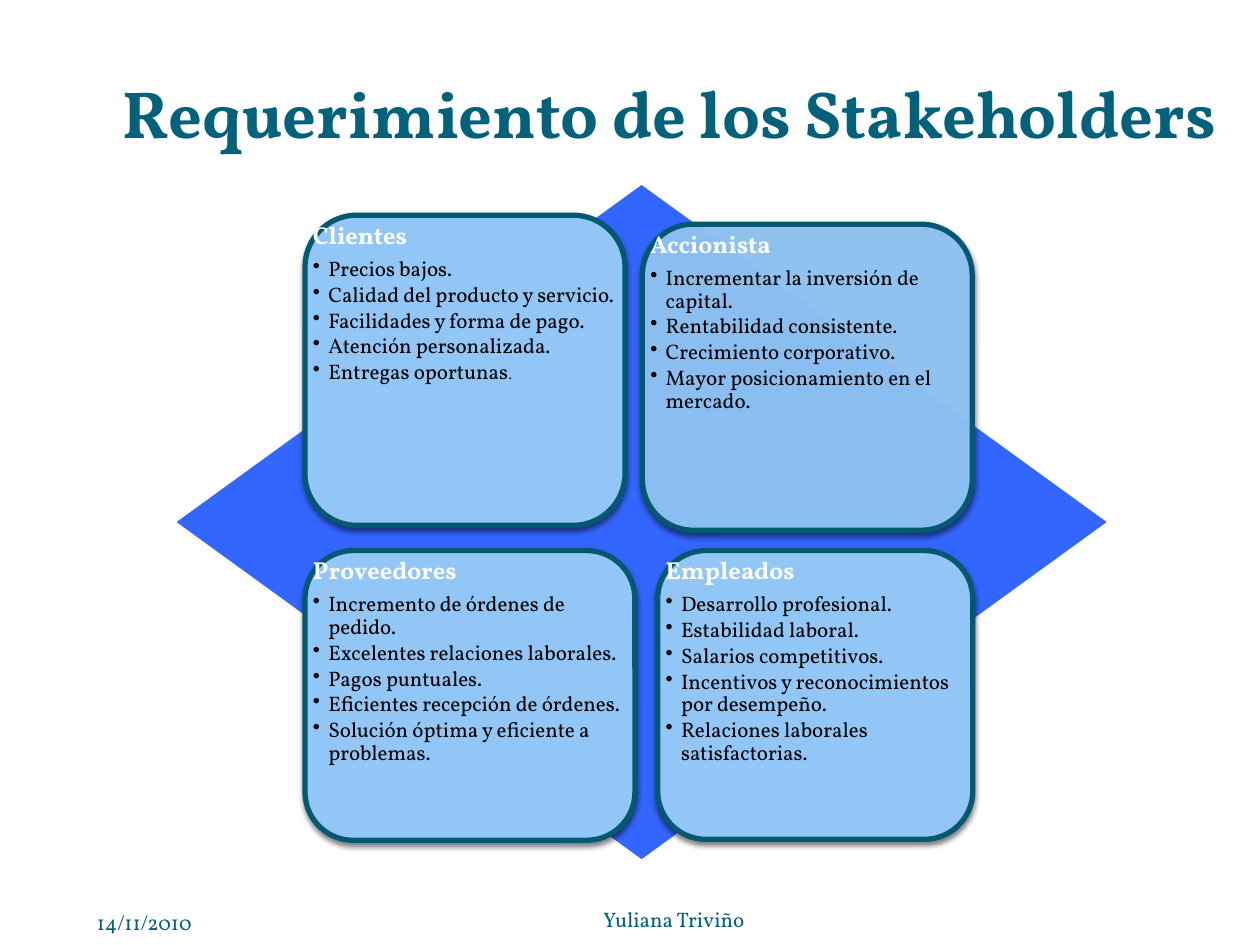
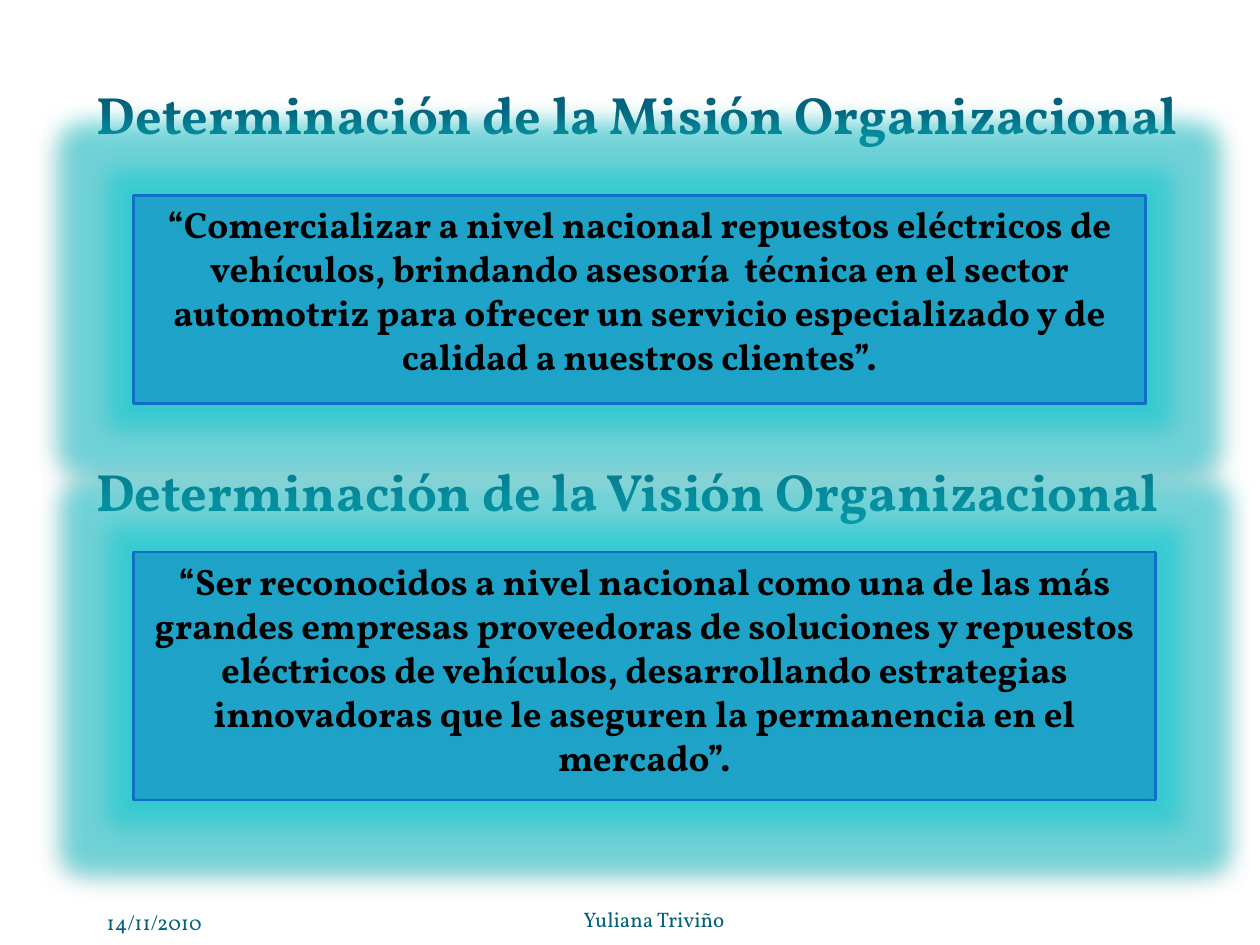
from lxml.etree import SubElement
from pptx import Presentation
from pptx.dml.color import RGBColor
from pptx.enum.shapes import MSO_SHAPE
from pptx.enum.text import MSO_ANCHOR, PP_ALIGN
from pptx.oxml.ns import qn
from pptx.util import Cm, Pt

TITLE_BLUE = RGBColor(0x04, 0x61, 0x7B)
DIAMOND_BLUE = RGBColor(0x33, 0x66, 0xFF)
CARD_BLUE = RGBColor(0x91, 0xC6, 0xF7)
CARD_EDGE = RGBColor(0x04, 0x58, 0x70)
PANEL_BLUE = RGBColor(0x00, 0x70, 0xC0)
PANEL_EDGE = RGBColor(0x0F, 0x6F, 0xC6)
GLOW = RGBColor(0x0B, 0xD0, 0xD9)
BLACK = RGBColor(0, 0, 0)
WHITE = RGBColor(0xFF, 0xFF, 0xFF)

FONT = "Vollkorn"
INSET = Cm(0.16)

# Boxes are (left, top, width, height) in centimetres.
DIAMOND = (3.56, 3.73, 18.75, 13.59)
CARDS = [
    ("Clientes", (6.15, 4.34, 6.45, 6.25), 100,
     ["Precios bajos.", "Calidad del producto y servicio.",
      "Facilidades y forma de pago.", "Atención personalizada.",
      "Entregas oportunas."]),
    ("Accionista", (12.95, 4.52, 6.65, 6.17), 94,
     ["Incrementar la inversión de capital.", "Rentabilidad consistente.",
      "Crecimiento corporativo.", "Mayor posicionamiento en el mercado."]),
    ("Proveedores", (6.15, 11.1, 6.65, 5.84), 100,
     ["Incremento de órdenes de pedido.", "Excelentes relaciones laborales.",
      "Pagos puntuales.", "Eficientes recepción de órdenes.",
      "Solución óptima y eficiente a problemas."]),
    ("Empleados", (13.26, 11.1, 6.35, 5.82), 100,
     ["Desarrollo profesional.", "Estabilidad laboral.",
      "Salarios competitivos.",
      "Incentivos y reconocimientos por desempeño.",
      "Relaciones laborales satisfactorias."]),
]
STATEMENTS = [
    ("Determinación de la Misión Organizacional", (1.5, 1.52, 22.71, 1.55),
     "“Comercializar a nivel nacional repuestos eléctricos de vehículos, "
     "brindando asesoría  técnica en el sector automotriz para ofrecer un "
     "servicio especializado y de calidad a nuestros clientes”.",
     (2.69, 3.94, 20.4, 4.19)),
    ("Determinación de la Visión Organizacional", (1.3, 9.12, 22.71, 1.55),
     "“Ser reconocidos a nivel nacional como una de las más grandes empresas "
     "proveedoras de soluciones y repuestos eléctricos de vehículos, "
     "desarrollando estrategias innovadoras que le aseguren la permanencia "
     "en el mercado”.",
     (2.69, 11.13, 20.6, 5.0)),
]


def in_cm(box):
    return [Cm(length) for length in box]


def write(paragraph, text, size, color, bold=False, font=FONT,
          align=PP_ALIGN.LEFT, after=0, spacing=None):
    """Add a formatted run to the paragraph."""
    run = paragraph.add_run()
    run.text = text
    run.font.name = font
    run.font.size = Pt(size)
    run.font.bold = bold
    run.font.color.rgb = color
    paragraph.alignment = align
    paragraph.space_after = Pt(after)
    if spacing:
        paragraph.line_spacing = spacing


def add_label(slide, box, text, anchor=MSO_ANCHOR.TOP, **text_format):
    frame = slide.shapes.add_textbox(*in_cm(box)).text_frame
    frame.word_wrap = True
    frame.vertical_anchor = anchor
    write(frame.paragraphs[0], text, color=TITLE_BLUE, **text_format)


def add_title(slide, box, text, size):
    add_label(slide, box, text, size=size, bold=True, align=PP_ALIGN.CENTER)


def add_footer(slide, date_left, author_left):
    add_label(slide, (date_left, 18.06, 4.8, 1.07), "14/11/2010", size=12,
              anchor=MSO_ANCHOR.MIDDLE, align=PP_ALIGN.CENTER)
    add_label(slide, (author_left, 18.14, 3.99, 0.79), "Yuliana Triviño",
              size=12, anchor=MSO_ANCHOR.MIDDLE)


def add_color(parent, color, opacity):
    node = SubElement(parent, qn("a:srgbClr"), val=str(color))
    SubElement(node, qn("a:alpha"), val=str(opacity * 1000))


def add_filled(slide, preset, box, fill, opacity=100, edge=None, edge_width=0):
    shape = slide.shapes.add_shape(preset, *in_cm(box))
    shape.shadow.inherit = False
    shape.fill.solid()
    shape.fill.fore_color.rgb = fill
    if opacity < 100:
        fill_color = shape.fill._xPr.find(".//" + qn("a:srgbClr"))
        SubElement(fill_color, qn("a:alpha"), val=str(opacity * 1000))
    if edge is None:
        shape.line.fill.background()
    else:
        shape.line.color.rgb = edge
        shape.line.width = Pt(edge_width)
    return shape


def add_effects(shape, blur, distance, opacity, glow_radius=0):
    """Give the shape a downward shadow and, if asked, a glow."""
    effects = shape._element.spPr.find(qn("a:effectLst"))
    if glow_radius:
        glow = SubElement(effects, qn("a:glow"), rad=str(Pt(glow_radius)))
        add_color(glow, GLOW, 50)
    shadow = SubElement(effects, qn("a:outerShdw"), blurRad=str(Pt(blur)),
                        dist=str(Pt(distance)), dir="5400000",
                        rotWithShape="0")
    add_color(shadow, BLACK, opacity)


def add_bullet(paragraph):
    paragraph.level = 1
    properties = paragraph._p.get_or_add_pPr()
    properties.set("marL", str(Cm(0.31)))
    properties.set("indent", str(-Cm(0.31)))
    SubElement(properties, qn("a:buChar"), char="•")


def add_card(slide, heading, box, opacity, needs):
    card = add_filled(slide, MSO_SHAPE.ROUNDED_RECTANGLE, box, CARD_BLUE,
                      opacity, CARD_EDGE, 3)
    add_effects(card, blur=3, distance=2, opacity=50)

    frame = slide.shapes.add_textbox(*in_cm(box)).text_frame
    frame.word_wrap = True
    frame.margin_left = frame.margin_right = INSET
    frame.margin_top = frame.margin_bottom = INSET
    write(frame.paragraphs[0], heading, 14, WHITE, bold=True, after=4.9,
          spacing=0.9)
    for need in needs:
        paragraph = frame.add_paragraph()
        add_bullet(paragraph)
        if need == "Entregas oportunas.":
            write(paragraph, need[:-1], 12, BLACK)
            write(paragraph, ".", 9, BLACK, font="Times New Roman",
                  after=1.8, spacing=0.9)
        else:
            write(paragraph, need, 12, BLACK, after=1.8, spacing=0.9)


def add_panel(slide, box, statement):
    panel = add_filled(slide, MSO_SHAPE.RECTANGLE, box, PANEL_BLUE, 42,
                       PANEL_EDGE, 1.5)
    add_effects(panel, blur=3.5, distance=2.2, opacity=32, glow_radius=28)
    frame = panel.text_frame
    frame.word_wrap = True
    frame.vertical_anchor = MSO_ANCHOR.TOP
    write(frame.paragraphs[0], statement, 21, BLACK, bold=True,
          align=PP_ALIGN.CENTER, after=10)


def build_stakeholders(slide):
    add_footer(slide, date_left=0.51, author_left=11.91)
    add_title(slide, (1.6, 1.32, 23.8, 1.88),
              "Requerimiento de los Stakeholders", 38)
    add_filled(slide, MSO_SHAPE.DIAMOND, DIAMOND, DIAMOND_BLUE)
    for card in CARDS:
        add_card(slide, *card)


def build_mission_and_vision(slide):
    add_footer(slide, date_left=0.71, author_left=11.51)
    for title, title_box, _, _ in STATEMENTS:
        add_title(slide, title_box, title, 30)
    for _, _, statement, panel_box in STATEMENTS:
        add_panel(slide, panel_box, statement)


def main():
    deck = Presentation()
    deck.slide_width, deck.slide_height = Cm(25.4), Cm(19.05)
    for build in (build_stakeholders, build_mission_and_vision):
        build(deck.slides.add_slide(deck.slide_layouts[6]))
    deck.save("out.pptx")


if __name__ == "__main__":
    main()
